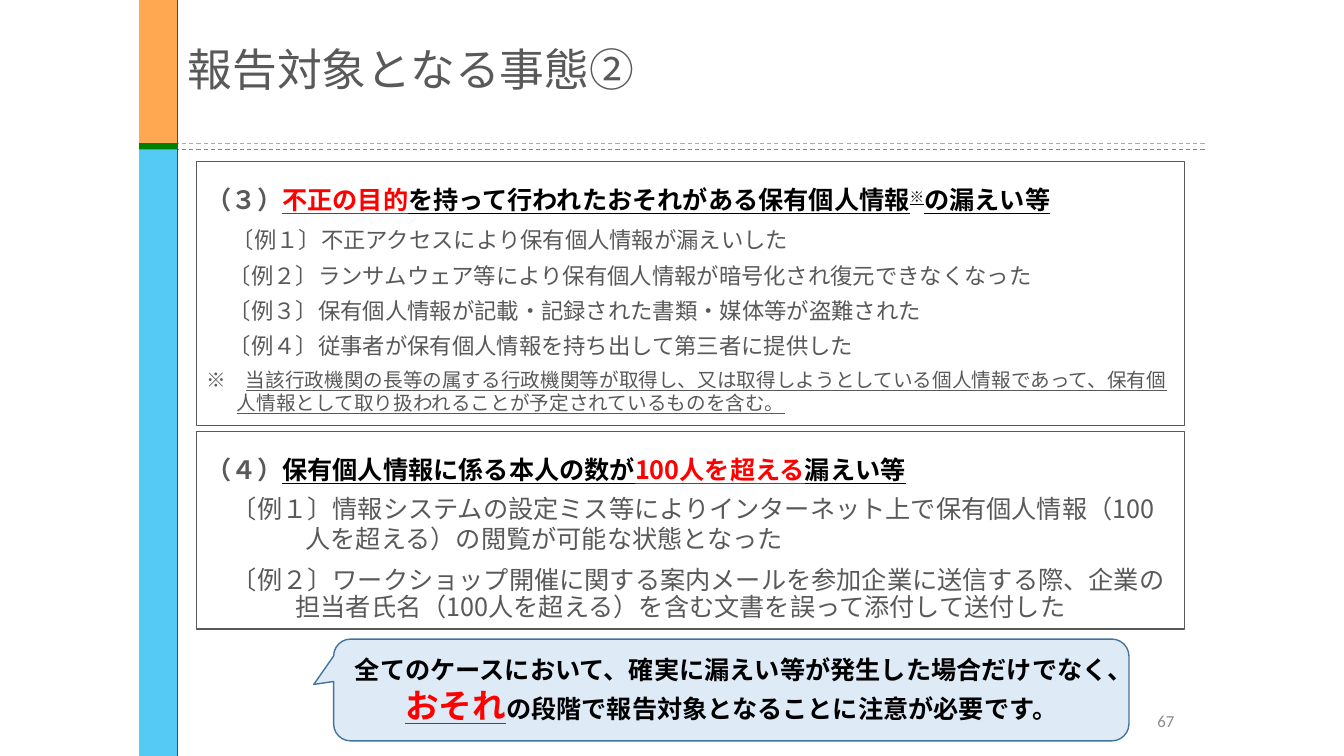
from lxml import etree
from pptx import Presentation
from pptx import util as u
from pptx.dml.color import RGBColor
from pptx.enum import dml, shapes, text
from pptx.oxml.ns import qn

Pt = u.Pt
JP = "Noto Sans CJK JP"
COLORS = dict(grey="595959", black="000000", red="FF0000", number="8C8C8C",
              blue="00B0F0", orange="FF9933", green="008000",
              callout="DEEBF7", callout_edge="43739E")

# Run formats
LEAD = dict(size=18, bold=True, color="grey")
KEY = dict(size=18, bold=True, underline=True, color="black")
ALERT = dict(KEY, color="red")
BODY = dict(size=18, bold=False, color="grey")
EXAMPLE = dict(BODY, size=16)
NOTE = dict(BODY, size=14)

# Paragraph formats
HEAD_P = dict(line_spacing=1.6, space_before=Pt(12))
ITEM_P = dict(line_spacing=1.0, space_before=Pt(6))

BOX_3 = [
    (HEAD_P, 0, [("（３）", LEAD), ("不正の目的", ALERT),
                 ("を持って行われたおそれがある保有個人情報", KEY),
                 ("※", dict(KEY, baseline=30)), ("の漏えい等", KEY)]),
    (ITEM_P, 64, [("　", BODY), ("〔例１〕不正アクセスにより保有個人情報が漏えいした", EXAMPLE)]),
    (ITEM_P, 64, [("　〔例２〕ランサムウェア等により保有個人情報が暗号化され復元できなくなった", EXAMPLE)]),
    (ITEM_P, 64, [("　〔例３〕保有個人情報が記載・記録された書類・媒体等が盗難された", EXAMPLE)]),
    (ITEM_P, 64, [("　〔例４〕従事者が保有個人情報を持ち出して第三者に提供した", EXAMPLE)]),
    (ITEM_P, 21.6, [("※　", NOTE),
                    ("当該行政機関の長等の属する行政機関等が取得し、又は取得しようとしている個人情報で"
                     "あって、保有個人情報として取り扱われることが予定されているものを含む。",
                     dict(NOTE, underline=True))]),
]
BOX_4 = [
    (HEAD_P, 0, [("（４）", LEAD), ("保有個人情報に係る本人の数が", KEY),
                 ("100人を超える", ALERT), ("漏えい等", KEY)]),
    (ITEM_P, 70.6, [("　〔例１〕情報システムの設定ミス等によりインターネット上で保有個人情報"
                     "（100人を超える）の閲覧が可能な状態となった", BODY)]),
    (dict(line_spacing=0.9, space_before=Pt(10)), 63.4,
     [("　〔例２〕ワークショップ開催に関する案内メールを参加企業に送信する際、企業の"
       "担当者氏名（100人を超える）を含む文書を誤って添付して送付した", BODY)]),
]
CENTER = dict(alignment=text.PP_ALIGN.CENTER)
CALLOUT = [
    (CENTER, 0, [("全てのケースにおいて、確実に漏えい等が発生した場合だけでなく、", LEAD | {"color": "black"})]),
    (CENTER, 0, [("おそれ", dict(ALERT, size=24)),
                 ("の段階で報告対象となることに注意が必要です。", LEAD | {"color": "black"})]),
]


def rgb(name):
    return RGBColor.from_string(COLORS[name])


def place(sp, box):
    for name, value in zip(("left", "top", "width", "height"), box):
        setattr(sp, name, Pt(value))


def add_run(p, words, size, color, font=JP, baseline=0, **fmt):
    r = p.add_run()
    r.text = words
    for name, value in dict(fmt, size=Pt(size), name=font).items():
        setattr(r.font, name, value)
    r.font.color.rgb = rgb(color)
    rPr = r._r.get_or_add_rPr()
    etree.SubElement(rPr, qn("a:ea")).set("typeface", font)
    if baseline:
        rPr.set("baseline", str(baseline * 1000))


def write(sp, paragraphs, anchor):
    tf = sp.text_frame
    for name, value in dict(word_wrap=True, auto_size=text.MSO_AUTO_SIZE.NONE,
                            vertical_anchor=anchor).items():
        setattr(tf, name, value)
    for i, (fmt, hang, runs) in enumerate(paragraphs):
        p = tf.add_paragraph() if i else tf.paragraphs[0]
        for name, value in fmt.items():
            setattr(p, name, value)
        pPr = p._p.get_or_add_pPr()
        pPr.set("marL", str(Pt(hang)))
        pPr.set("indent", str(-Pt(hang)))
        etree.SubElement(pPr, qn("a:buNone"))
        for words, run_fmt in runs:
            add_run(p, words, **run_fmt)


def add_bar(s, box, color, alpha=100):
    sp = s.shapes.add_shape(shapes.MSO_SHAPE.RECTANGLE, *map(Pt, box))
    sp.shadow.inherit = False
    sp.fill.solid()
    sp.fill.fore_color.rgb = rgb(color)
    sp.line.fill.background()
    if alpha < 100:
        clr = sp._element.spPr.find(qn("a:solidFill"))[0]
        etree.SubElement(clr, qn("a:alpha")).set("val", str(alpha * 1000))


def add_rule(s, ends, color, width, dash=None):
    ln = s.shapes.add_connector(shapes.MSO_CONNECTOR.STRAIGHT, *map(Pt, ends))
    ln.line.color.rgb = rgb(color)
    ln.line.width = Pt(width)
    ln.line.dash_style = dash
    etree.SubElement(ln._element.spPr, qn("a:effectLst"))


def frame(s, box):
    """Side bars and rules; the box runs from the bars to the end of the rules."""
    x, y, w, h = box
    bar, split, gap = 27.4, 102.2, 4.6
    edge = x + bar
    add_bar(s, (x, y + split + gap - 1, bar, h - split - gap + 1), "blue", 67)
    add_bar(s, (x, y, bar, split + gap - 1), "orange", 85)
    for dy, color in ((split, "orange"), (split + gap, "blue")):
        add_rule(s, (x + w, y + dy, edge, y + dy), color, 0.75, dml.MSO_LINE.DASH)
    add_bar(s, (x, y + split, bar, gap), "green")
    add_rule(s, (edge, y, edge, y + h), "green", 1)


def title(s, box, words):
    sp = s.shapes.title
    place(sp, box)
    fmt = dict(alignment=text.PP_ALIGN.LEFT, line_spacing=0.9)
    write(sp, [(fmt, 0, [(words, dict(size=32, color="grey"))])], text.MSO_ANCHOR.MIDDLE)


def case_box(sp, box, paragraphs):
    place(sp, box)
    sp.line.color.rgb = rgb("grey")
    sp.line.width = Pt(1)
    write(sp, paragraphs, text.MSO_ANCHOR.TOP)


def callout(s, box, paragraphs):
    sp = s.shapes.add_shape(shapes.MSO_SHAPE.ROUNDED_RECTANGULAR_CALLOUT, *map(Pt, box))
    sp.shadow.inherit = False
    for i, value in enumerate((-0.525, -0.054, 0.167)):
        sp.adjustments[i] = value
    sp.fill.solid()
    sp.fill.fore_color.rgb = rgb("callout")
    sp.line.color.rgb = rgb("callout_edge")
    sp.line.width = Pt(1)
    write(sp, paragraphs, text.MSO_ANCHOR.MIDDLE)


def page_number(s, box, number):
    sp = s.shapes.add_textbox(*map(Pt, box))
    run = (number, dict(size=12, color="number", font="Calibri"))
    write(sp, [(dict(alignment=text.PP_ALIGN.RIGHT), 0, [run])], text.MSO_ANCHOR.MIDDLE)


def main():
    prs = Presentation()
    prs.slide_width, prs.slide_height = Pt(960), Pt(540)
    s = prs.slides.add_slide(prs.slide_layouts[3])
    frame(s, (99.3, 0, 761.1, 540))
    title(s, (126.7, 0, 733.7, 102.2), "報告対象となる事態②")
    case_box(s.placeholders[1], (140.4, 115.2, 705.6, 188.6), BOX_3)
    case_box(s.placeholders[2], (140.4, 308.2, 705.6, 141.1), BOX_4)
    callout(s, (238.3, 456.5, 568.1, 72.7), CALLOUT)
    page_number(s, (670.3, 500.4, 175.7, 28.8), "67")
    prs.save("out.pptx")


if __name__ == "__main__":
    main()
